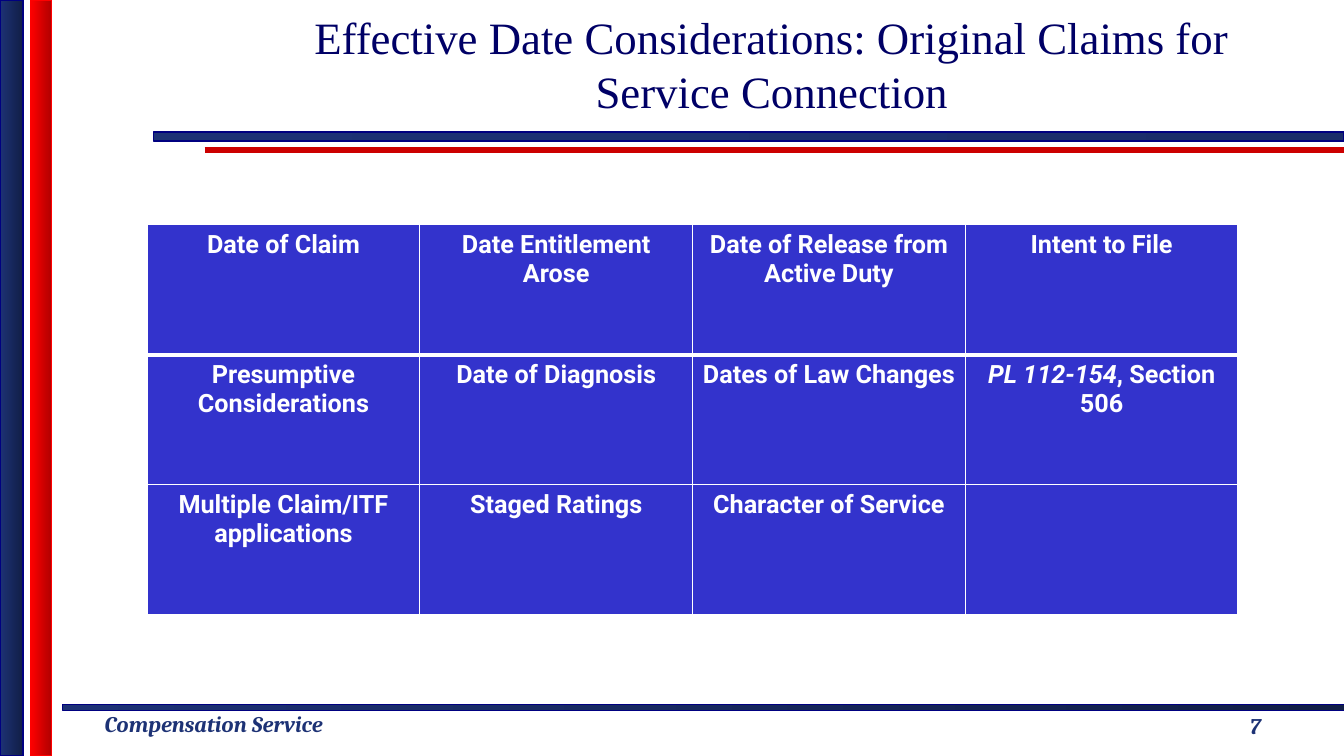
from lxml import etree
from pptx import Presentation
from pptx.dml.color import RGBColor
from pptx.enum.shapes import MSO_CONNECTOR, MSO_SHAPE
from pptx.enum.text import MSO_ANCHOR, PP_ALIGN
from pptx.oxml.ns import qn
from pptx.util import Inches, Pt

RECT = MSO_SHAPE.RECTANGLE
LINE = MSO_CONNECTOR.STRAIGHT
LEFT, CENTER = PP_ALIGN.LEFT, PP_ALIGN.CENTER
TOP, MIDDLE = MSO_ANCHOR.TOP, MSO_ANCHOR.MIDDLE

WHITE = RGBColor(0xFF, 0xFF, 0xFF)
NAVY = RGBColor(0x1D, 0x32, 0x75)
DUSK = RGBColor(0x1A, 0x2D, 0x69)
NIGHT = RGBColor(0x11, 0x1E, 0x46)
EDGE = RGBColor(0x00, 0x00, 0x80)
RED = RGBColor(0xFF, 0x00, 0x00)
BRICK = RGBColor(0xB2, 0x00, 0x00)
RULE = RGBColor(0xCC, 0x00, 0x00)
INK = RGBColor(0x00, 0x00, 0x66)
CELL = RGBColor(0x33, 0x33, 0xCC)

TITLE = {"name": "Times New Roman", "size": Pt(32)}
FOOT = {"name": "Cambria", "size": Pt(16), "bold": True, "italic": True}
BODY = {"name": "Roboto", "size": Pt(18), "bold": True}

# Each cell is a list of (text, italic) runs or plain text
ROWS = [
    ["Date of Claim", "Date Entitlement Arose",
     "Date of Release from Active Duty", "Intent to File"],
    ["Presumptive Considerations", "Date of Diagnosis",
     "Dates of Law Changes", [("PL 112-154", True), (", Section 506", False)]],
    ["Multiple Claim/ITF applications", "Staged Ratings",
     "Character of Service", ""],
]

# Left, top, width, height, start colour, end colour, outline
BARS = [
    (0.62, 6.99, 12.72, 0.06, NAVY, NIGHT, EDGE),
    (1.52, 1.31, 11.81, 0.09, NAVY, DUSK, EDGE),
    (0, 0, 0.23, 7.5, NAVY, NIGHT, EDGE),
    (0.3, 0, 0.21, 7.5, RED, BRICK, RED),
]


def style(font, look, color):
    for key, value in look.items():
        setattr(font, key, value)
    font.color.rgb = color


def add_rule(slide, left, right, y):
    rule = slide.shapes.add_connector(
        LINE, Inches(left), Inches(y), Inches(right), Inches(y))
    rule.line.color.rgb = RULE
    rule.line.width = Pt(4)
    etree.SubElement(rule.line._get_or_add_ln().getparent(),
                     qn("a:effectLst"))


def add_bar(slide, left, top, width, height, start, end, edge):
    bar = slide.shapes.add_shape(
        RECT, Inches(left), Inches(top), Inches(width), Inches(height))
    bar.shadow.inherit = False
    bar.fill.gradient()
    bar.fill.gradient_angle = 0
    for stop, color in zip(bar.fill.gradient_stops, (start, end)):
        stop.color.rgb = color
    bar.line.color.rgb = edge
    bar.line.width = Pt(1)


def add_text(slide, box, text, look, color, align=CENTER, anchor=MIDDLE,
             wrap=True):
    frame = slide.shapes.add_textbox(*map(Inches, box)).text_frame
    frame.word_wrap = wrap
    frame.vertical_anchor = anchor
    par = frame.paragraphs[0]
    par.alignment = align
    run = par.add_run()
    run.text = text
    style(run.font, look, color)


def add_border(cell, side, width):
    line = etree.SubElement(cell._tc.get_or_add_tcPr(), qn(f"a:ln{side}"),
                            w=str(Pt(width)))
    fill = etree.SubElement(line, qn("a:solidFill"))
    etree.SubElement(fill, qn("a:srgbClr"), val=str(WHITE))


def fill_cell(cell, runs, top, bottom):
    for side, width in (("L", 1), ("R", 1), ("T", top), ("B", bottom)):
        add_border(cell, side, width)
    cell.fill.solid()
    cell.fill.fore_color.rgb = CELL
    par = cell.text_frame.paragraphs[0]
    par.alignment = CENTER
    if isinstance(runs, str):
        runs = [(runs, False)] if runs else []
    for text, italic in runs:
        run = par.add_run()
        run.text = text
        style(run.font, {**BODY, "italic": italic}, WHITE)


def add_grid(slide, left, top, width, height):
    table = slide.shapes.add_table(
        len(ROWS), len(ROWS[0]), Inches(left), Inches(top),
        Inches(width), Inches(height)).table
    for r, row in enumerate(ROWS):
        for c, runs in enumerate(row):
            # A thick line parts the header from the rows below
            fill_cell(table.cell(r, c), runs,
                      3 if r == 1 else 1, 3 if r == 0 else 1)


def main():
    deck = Presentation()
    deck.slide_width, deck.slide_height = Inches(13.33), Inches(7.5)
    slide = deck.slides.add_slide(deck.slide_layouts[6])

    # Frame of rules and bars
    add_rule(slide, 2.03, 13.33, 1.49)
    for bar in BARS:
        add_bar(slide, *bar)

    # Title and footer
    add_text(slide, (2.34, 0, 10.63, 1.26),
             "Effective Date Considerations: Original Claims for "
             "Service Connection", TITLE, INK)
    add_text(slide, (0.94, 7, 2.82, 0.37), "Compensation Service",
             FOOT, NAVY, LEFT, TOP, False)
    add_text(slide, (11.56, 6.95, 1.78, 0.5), "7", FOOT, NAVY)

    # Table of considerations
    add_grid(slide, 1.46, 2.23, 10.82, 3.87)
    deck.save("out.pptx")


if __name__ == "__main__":
    main()
